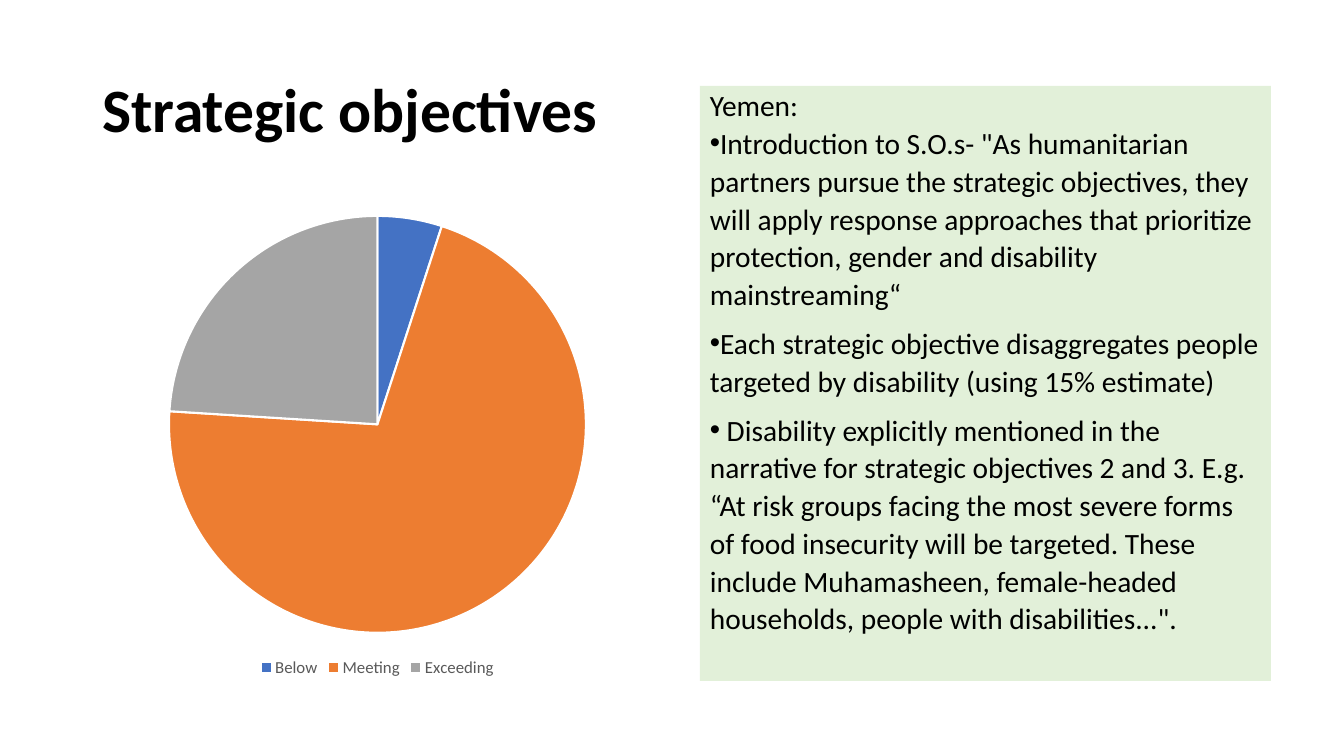
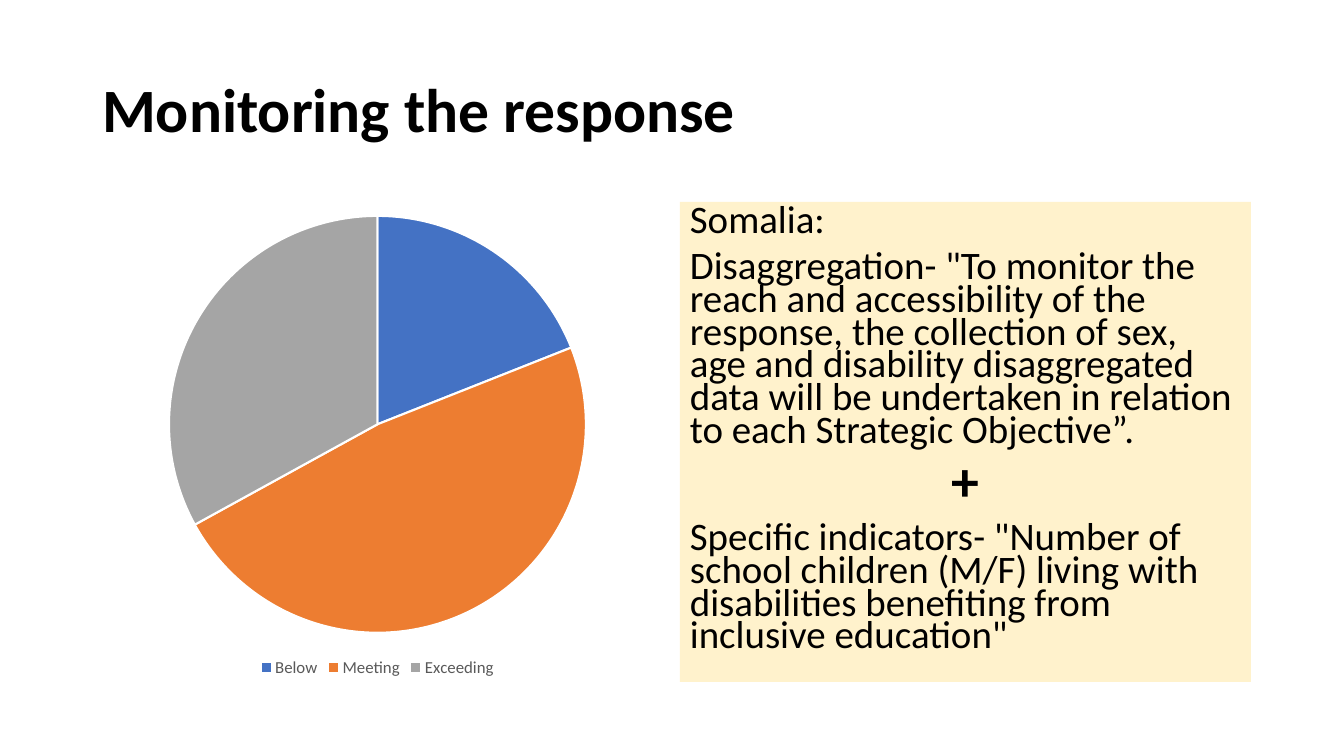
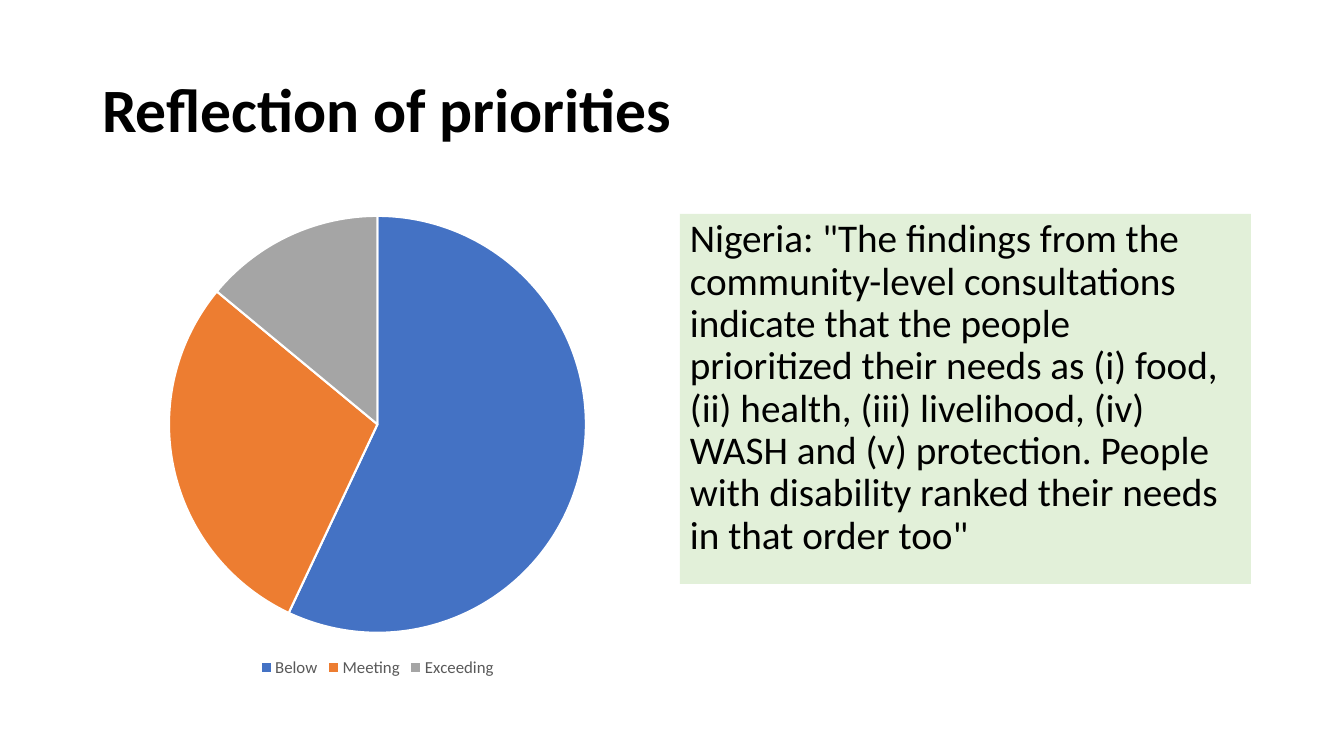
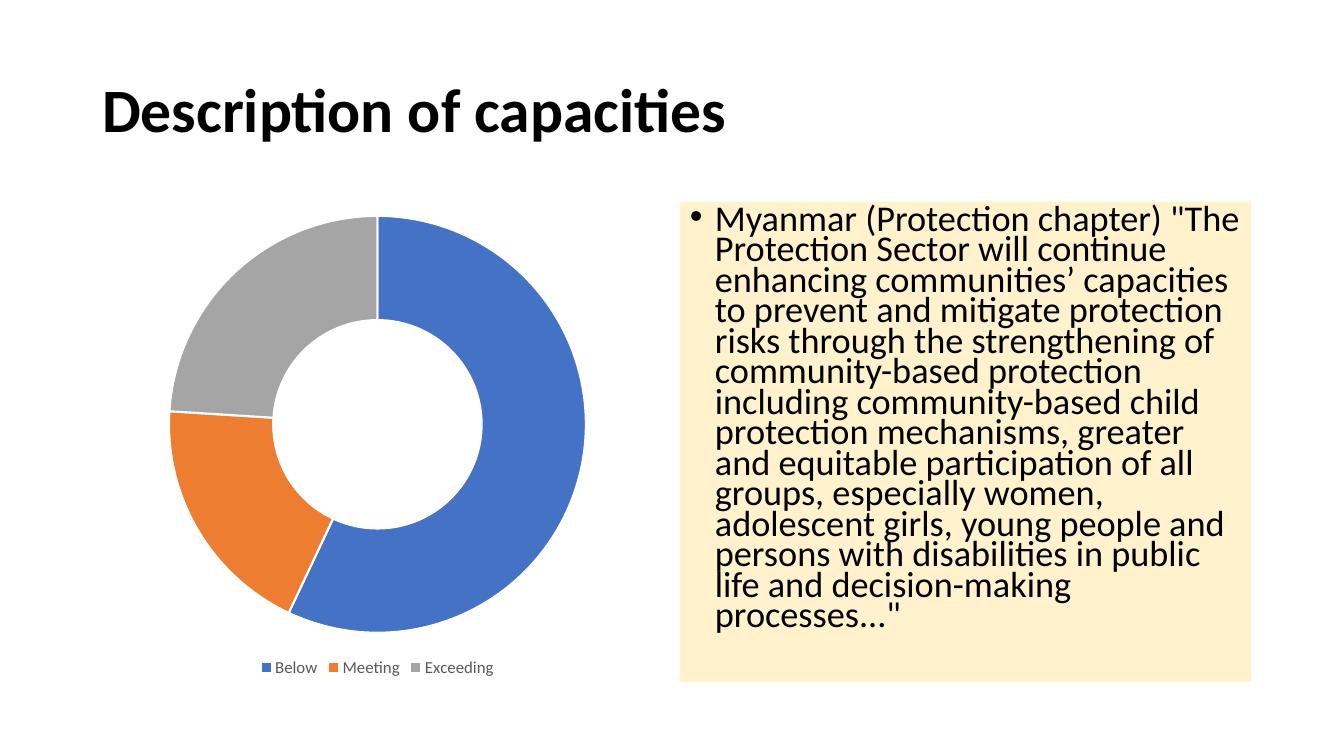
from lxml import etree
from pptx import Presentation
from pptx.chart.data import CategoryChartData
from pptx.dml.color import RGBColor
from pptx.enum.chart import XL_CHART_TYPE, XL_LEGEND_POSITION
from pptx.enum.shapes import MSO_SHAPE
from pptx.enum.text import MSO_ANCHOR, MSO_AUTO_SIZE, PP_ALIGN
from pptx.oxml.ns import qn
from pptx.util import Pt

PIE, DOUGHNUT = XL_CHART_TYPE.PIE, XL_CHART_TYPE.DOUGHNUT
BOTTOM = XL_LEGEND_POSITION.BOTTOM
RECTANGLE = MSO_SHAPE.RECTANGLE
TOP, MIDDLE = MSO_ANCHOR.TOP, MSO_ANCHOR.MIDDLE
LEFT, CENTER = PP_ALIGN.LEFT, PP_ALIGN.CENTER
NO_FIT = MSO_AUTO_SIZE.NONE

BLACK = RGBColor(0x00, 0x00, 0x00)
WHITE = RGBColor(0xFF, 0xFF, 0xFF)
GREY_TEXT = RGBColor(0x59, 0x59, 0x59)
GREEN = RGBColor(0xE2, 0xF0, 0xD9)
YELLOW = RGBColor(0xFF, 0xF2, 0xCC)
RATING_COLOURS = [
    RGBColor(0x44, 0x72, 0xC4),
    RGBColor(0xED, 0x7D, 0x31),
    RGBColor(0xA5, 0xA5, 0xA5),
]
RATINGS = ["Below", "Meeting", "Exceeding"]
FONT = "Calibri"
SLIDE_WIDTH, SLIDE_HEIGHT = 1344, 756
EMU_PER_PX = 12192000 / SLIDE_WIDTH
HANGING = 25


def px(*lengths):
    return [round(length * EMU_PER_PX) for length in lengths]


def format_paragraph(paragraph, size, spacing, before=0, after=0, align=LEFT, bold=False):
    paragraph.alignment = align
    paragraph.line_spacing = spacing
    paragraph.space_before = Pt(before)
    paragraph.space_after = Pt(after)
    paragraph.font.name = FONT
    paragraph.font.size = Pt(size)
    paragraph.font.bold = bold
    paragraph.font.color.rgb = BLACK


PLAIN = {"spacing": 0.9, "before": 10}
TIGHT = {"spacing": 0.7, "before": 10}
LOOSE = {"spacing": 1.07, "after": 8}

SLIDES = [
    ("Strategic objectives", PIE, (5, 71, 24), GREEN, (700, 86, 571, 595), [
        ("Yemen:", 21, None, PLAIN),
        ("Introduction to S.O.s- \"As humanitarian partners pursue the strategic objectives, "
         "they will apply response approaches that prioritize protection, gender and "
         "disability mainstreaming“", 21, 0, LOOSE),
        ("Each strategic objective disaggregates people targeted by disability "
         "(using 15% estimate)", 21, 0, LOOSE),
        (" Disability explicitly mentioned in the narrative for strategic objectives 2 and 3. "
         "E.g. “At risk groups facing the most severe forms of food insecurity will be "
         "targeted. These include Muhamasheen, female-headed households, people with "
         "disabilities...\".", 21, 0, LOOSE),
    ]),
    ("Monitoring the response", PIE, (19, 48, 33), YELLOW, (680, 202, 571, 480), [
        ("Somalia:", 27.8, None, TIGHT),
        ("Disaggregation- \"To monitor the reach and accessibility of the response, the "
         "collection of sex, age and disability disaggregated data will be undertaken in "
         "relation to each Strategic Objective”.", 27.8, None, TIGHT),
        ("+", 39.8, None, {**TIGHT, "align": CENTER, "bold": True}),
        ("Specific indicators- \"Number of school children (M/F) living with disabilities "
         "benefiting from inclusive education\"", 27.8, None, TIGHT),
    ]),
    ("Reflection of priorities", PIE, (57, 29, 14), GREEN, (680, 214, 571, 370), [
        ("Nigeria: \"The findings from the community-level consultations indicate that the "
         "people prioritized their needs as (i) food, (ii) health, (iii) livelihood, (iv) WASH "
         "and (v) protection. People with disability ranked their needs in that order too\"",
         28, None, PLAIN),
    ]),
    ("Description of capacities", DOUGHNUT, (57, 19, 24), YELLOW, (680, 202, 571, 480), [
        ("Myanmar (Protection chapter) \"The Protection Sector will continue enhancing "
         "communities’ capacities to prevent and mitigate protection risks through the "
         "strengthening of community-based protection including community-based child "
         "protection mechanisms, greater and equitable participation of all groups, especially "
         "women, adolescent girls, young people and persons with disabilities in public life "
         "and decision-making processes...\"", 25.9, HANGING, TIGHT),
    ]),
]

deck = Presentation()
deck.slide_width, deck.slide_height = px(SLIDE_WIDTH, SLIDE_HEIGHT)

for heading, chart_type, shares, panel_colour, panel_box, passages in SLIDES:
    slide = deck.slides.add_slide(deck.slide_layouts[5])

    title = slide.shapes.title
    title.left, title.top, title.width, title.height = px(92, 40, 1159, 146)
    title.text_frame.text = heading
    title.text_frame.auto_size = NO_FIT
    title.text_frame.vertical_anchor = MIDDLE
    format_paragraph(title.text_frame.paragraphs[0], 44, 0.9, bold=True)

    ratings = CategoryChartData()
    ratings.categories = RATINGS
    ratings.add_series("Series 1", shares)
    chart = slide.shapes.add_chart(chart_type, *px(92, 202, 571, 480), ratings).chart
    chart.has_title = False
    chart.font.name = FONT
    chart.font.size = Pt(10)
    chart.has_legend = True
    chart.legend.position = BOTTOM
    chart.legend.include_in_layout = False
    chart.legend.font.name = FONT
    chart.legend.font.size = Pt(12)
    chart.legend.font.color.rgb = GREY_TEXT
    plot = chart.plots[0]
    plot.vary_by_categories = True
    for index, colour in enumerate(RATING_COLOURS):
        slice_format = plot.series[0].points[index].format
        slice_format.fill.solid()
        slice_format.fill.fore_color.rgb = colour
        slice_format.line.color.rgb = WHITE
        slice_format.line.width = Pt(1.5)
    if chart_type == DOUGHNUT:
        for hole in chart.element.iter(qn("c:holeSize")):
            hole.set("val", "75")

    panel = slide.shapes.add_shape(RECTANGLE, *px(*panel_box))
    panel.shadow.inherit = False
    panel.fill.solid()
    panel.fill.fore_color.rgb = panel_colour
    panel.line.fill.background()
    frame = panel.text_frame
    frame.word_wrap = True
    frame.vertical_anchor = TOP
    for index, (passage, size, bullet_margin, style) in enumerate(passages):
        paragraph = frame.add_paragraph() if index else frame.paragraphs[0]
        paragraph.text = passage
        if bullet_margin is not None:
            properties = paragraph._p.get_or_add_pPr()
            margin, indent = px(bullet_margin, -HANGING)
            properties.set("marL", str(margin))
            properties.set("indent", str(indent))
            etree.SubElement(properties, qn("a:buFont"), typeface="Arial")
            etree.SubElement(properties, qn("a:buChar"), char="•")
        format_paragraph(paragraph, size, **style)

deck.save("out.pptx")
